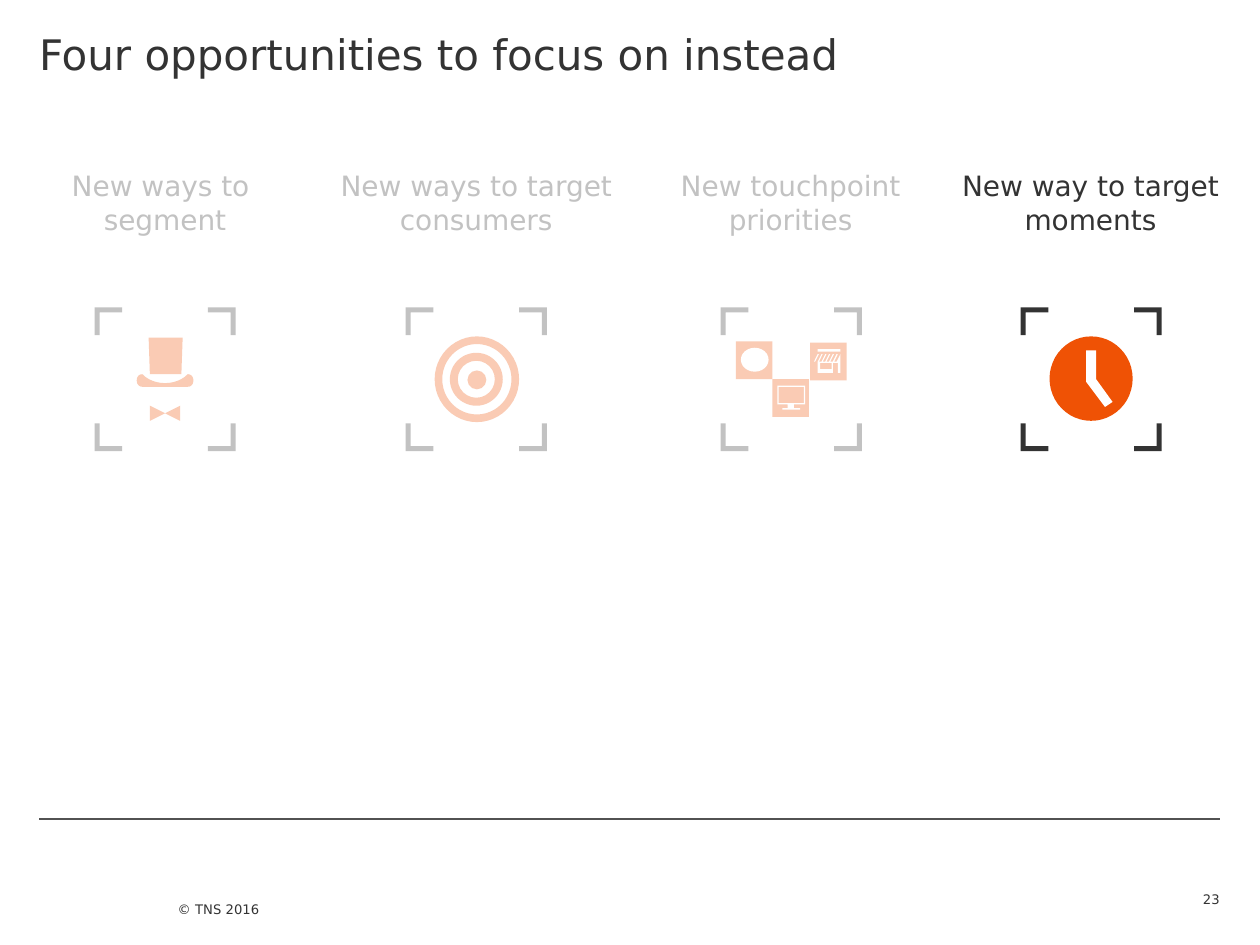
from lxml.etree import SubElement
from pptx import Presentation
from pptx.dml.color import RGBColor
from pptx.enum.shapes import MSO_CONNECTOR, MSO_SHAPE as Preset
from pptx.enum.text import MSO_ANCHOR as Anchor, PP_ALIGN as Align
from pptx.oxml.ns import qn
from pptx.util import Inches, Pt

THEME = {
    "font": "DejaVu Sans",
    "ink": "333333", "accent": "EF5205", "paper": "FFFFFF", "rule": "525252",
    "title": 24, "heading": 16, "small": 7.5,
}


def rect(left, top, right, bottom):
    return [(left, top), (right, top), (right, bottom), (left, bottom)]


def cubic(start, c1, c2, end, steps=12):
    """Points along a Bezier curve."""
    points = []
    for i in range(steps + 1):
        t = i / steps
        weights = ((1 - t) ** 3, 3 * t * (1 - t) ** 2, 3 * t * t * (1 - t), t ** 3)
        points.append(tuple(sum(w * p[axis] for w, p in zip(weights, (start, c1, c2, end)))
                            for axis in (0, 1)))
    return points


# Content: icon parts are measured from the centre of their frame.
# Preset part: (shape, colour, (left, top, width, height), adjustment)
# Outline part: (None, colour, contours, None); an inner contour is a hole
BRIM = (cubic((-0.18, -0.04), (-0.09, 0.055), (0.09, 0.055), (0.18, -0.04))
        + cubic((0.18, -0.04), (0.24, -0.04), (0.24, 0.06), (0.18, 0.06))
        + cubic((-0.18, 0.06), (-0.24, 0.06), (-0.24, -0.04), (-0.18, -0.04)))
HAT = [
    (None, "accent", [[(-0.13, -0.33), (0.14, -0.33), (0.13, -0.04), (-0.12, -0.04)]], None),
    (None, "accent", [BRIM], None),
    (None, "accent", [[(-0.12, 0.21), (0, 0.27), (-0.12, 0.33)]], None),
    (None, "accent", [[(0.12, 0.21), (0, 0.27), (0.12, 0.33)]], None),
]
TARGET = [
    (Preset.DONUT, "accent", (-0.33, -0.34, 0.67, 0.68), 0.09),
    (Preset.DONUT, "accent", (-0.21, -0.21, 0.42, 0.42), 0.15),
    (Preset.OVAL, "accent", (-0.07, -0.07, 0.15, 0.15), None),
]
AWNING = [[(x, -0.14), (x + 0.01, -0.14), (x + 0.04, -0.20), (x + 0.03, -0.20)]
          for x in (0.18 + 0.03 * i for i in range(6))]
STORE = [
    rect(0.21, -0.24, 0.39, -0.22),
    *AWNING,
    [(0.21, -0.14), (0.36, -0.14), (0.39, -0.20), (0.39, -0.05), (0.37, -0.05),
     (0.37, -0.13), (0.33, -0.13), (0.33, -0.05), (0.21, -0.05)],
    rect(0.23, -0.13, 0.32, -0.08),
]
SCREEN = [
    rect(-0.11, 0.05, 0.11, 0.20), rect(-0.10, 0.06, 0.10, 0.19),
    rect(-0.03, 0.20, 0.02, 0.23), rect(-0.07, 0.23, 0.07, 0.24),
]
TOUCHPOINTS = [
    *[(Preset.RECTANGLE, "accent", (left, top, 0.29, 0.3), None)
      for left, top in ((-0.44, -0.3), (-0.15, 0), (0.15, -0.29))],
    (Preset.OVAL, "paper", (-0.4, -0.25, 0.22, 0.19), None),
    (None, "paper", STORE, None),
    (None, "paper", SCREEN, None),
]
CLOCK = [
    (Preset.OVAL, "accent", (-0.33, -0.34, 0.66, 0.67), None),
    (None, "paper", [[(-0.04, -0.23), (0.04, -0.23), (0.04, 0), (0.17, 0.18),
                      (0.11, 0.22), (-0.04, 0.02)]], None),
]

TITLE = "Four opportunities to focus on instead"
# heading lines, heading left and width, icon centre, icon
OPPORTUNITIES = [
    (["New ways to ", "segment"], 0.09, 2.44, 1.31, HAT),
    (["New ways to target consumers"], 2.57, 2.42, 3.78, TARGET),
    (["New touchpoint priorities"], 5.14, 2.27, 6.28, TOUCHPOINTS),
    (["New way to target moments"], 7.44, 2.43, 8.66, CLOCK),
]
HEADING_TOP, HEADING_HEIGHT = 1.29, 0.87
ICON_MIDDLE = 3.01
FRAME_X, FRAME_Y, ARM, THICK = 0.56, 0.57, 0.22, 0.04


def color(name):
    return RGBColor.from_string(THEME[name])


def paint(shape, name):
    shape.shadow.inherit = False
    shape.fill.solid()
    shape.fill.fore_color.rgb = color(name)
    shape.line.fill.background()


def write(box, lines, size, align=Align.LEFT, anchor=Anchor.TOP, insets=(0, 0, 0, 0)):
    frame = box.text_frame
    frame.word_wrap = True
    frame.vertical_anchor = anchor
    (frame.margin_left, frame.margin_top,
     frame.margin_right, frame.margin_bottom) = map(Inches, insets)
    para = frame.paragraphs[0]
    para.alignment = align
    for i, line in enumerate(lines):
        if i:
            para.add_line_break()
        span = para.add_run()
        span.text = line
        span.font.name = THEME["font"]
        span.font.size = Pt(THEME[size])
        span.font.color.rgb = color("ink")


def add_text(page, place, *args, **options):
    write(page.shapes.add_textbox(*map(Inches, place)), *args, **options)


def add_outline(group, center, contours, name):
    placed = [[(Inches(center + x), Inches(ICON_MIDDLE + y)) for x, y in contour]
              for contour in contours]
    builder = group.shapes.build_freeform(*placed[0][0])
    for i, points in enumerate(placed):
        if i:
            builder.move_to(*points[0])
        builder.add_line_segments(points[1:], close=True)
    paint(builder.convert_to_shape(), name)


def add_icon(page, center, parts):
    group = page.shapes.add_group_shape()
    # Corner brackets
    w, h = FRAME_X, FRAME_Y
    bracket = [(w, h), (w - ARM, h), (w - ARM, h - THICK),
               (w - THICK, h - THICK), (w - THICK, h - ARM), (w, h - ARM)]
    for sx, sy in ((-1, -1), (1, -1), (1, 1), (-1, 1)):
        add_outline(group, center, [[(sx * x, sy * y) for x, y in bracket]], "ink")
    # Symbol
    for preset, name, geometry, adjustment in parts:
        if preset is None:
            add_outline(group, center, geometry, name)
            continue
        left, top, width, height = geometry
        shape = group.shapes.add_shape(
            preset, *map(Inches, (center + left, ICON_MIDDLE + top, width, height)))
        if adjustment:
            shape.adjustments[0] = adjustment
        paint(shape, name)


def main():
    deck = Presentation()
    deck.slide_width, deck.slide_height = Inches(10), Inches(7.5)
    page = deck.slides.add_slide(deck.slide_layouts[5])

    # Title
    title = page.shapes.title
    title.left, title.top, title.width, title.height = map(Inches, (0.31, 0, 9.37, 1.13))
    write(title, [TITLE], "title", insets=(0, 0.23, 0, 0))

    # Footer
    rule = page.shapes.add_connector(
        MSO_CONNECTOR.STRAIGHT, *map(Inches, (0.31, 6.5, 9.68, 6.5)))
    rule.line.color.rgb = color("rule")
    rule.line.width = Pt(0.75)
    SubElement(rule._element.spPr, qn("a:effectLst"))
    add_text(page, (1.41, 6.92, 2.78, 0.58), ["© TNS 2016"], "small",
             anchor=Anchor.BOTTOM, insets=(0, 0, 0, 0.31))
    add_text(page, (9.13, 6.92, 0.55, 0.28), ["23"], "small",
             align=Align.RIGHT, anchor=Anchor.BOTTOM)

    # Opportunities
    for lines, left, width, center, parts in OPPORTUNITIES:
        add_text(page, (left, HEADING_TOP, width, HEADING_HEIGHT), lines, "heading",
                 align=Align.CENTER, insets=(0.1, 0.05, 0.1, 0.05))
        add_icon(page, center, parts)

    # Translucent veil over the first three
    veil = page.shapes.add_shape(Preset.RECTANGLE, *map(Inches, (0.32, 1.1, 7.1, 2.99)))
    paint(veil, "paper")
    tint = veil._element.spPr.find(qn("a:solidFill"))[0]
    SubElement(tint, qn("a:alpha"), val="70000")

    deck.save("out.pptx")


if __name__ == "__main__":
    main()
